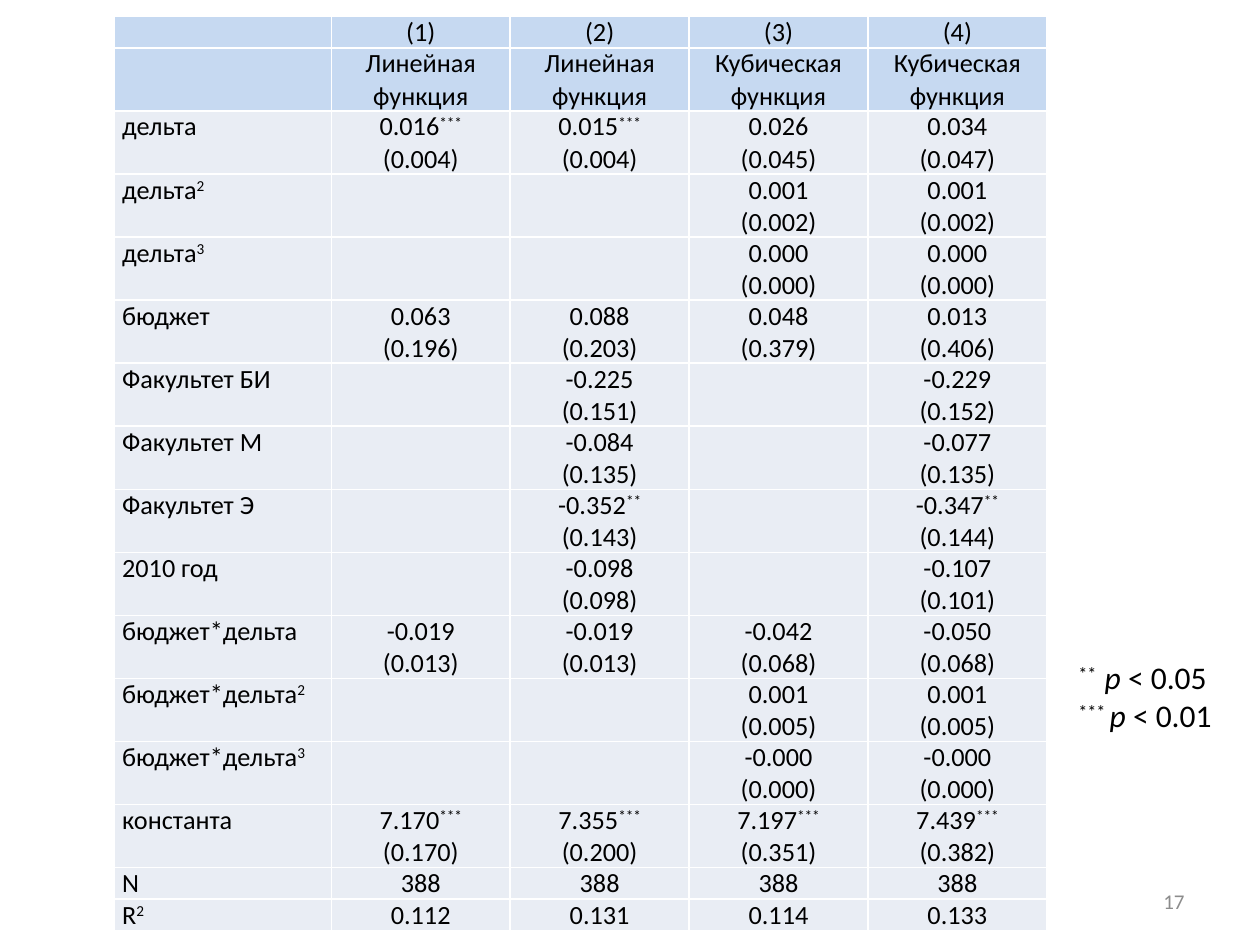
from dataclasses import dataclass

from lxml import etree
from pptx import Presentation
from pptx import util as u
from pptx.dml.color import RGBColor
from pptx.enum import text
from pptx.oxml import ns


@dataclass(frozen=True)
class Theme:
    """Colours, font and type sizes of the slide."""
    font: str = "Calibri"
    ink: str = "000000"
    grey: str = "8C8C8C"
    head: str = "C6D9F1"
    body: str = "E9EDF4"
    rule: str = "FFFFFF"
    cell: int = 15
    note: int = 18
    page: int = 12


THEME = Theme()
WIDE, HIGH = 10, 7.5
LINE = 0.23
COLS = [1.72] + [1.42] * 4
LEFT, MID, RIGHT = text.PP_ALIGN.LEFT, text.PP_ALIGN.CENTER, text.PP_ALIGN.RIGHT

HEAD = [
    ["", "(1)", "(2)", "(3)", "(4)"],
    ["", "Линейная функция", "Линейная функция", "Кубическая функция", "Кубическая функция"],
]
BODY = [
    ["дельта", "0.016^***^\n(0.004)", "0.015^***^\n(0.004)", "0.026\n(0.045)", "0.034\n(0.047)"],
    ["дельта^2", "", "", "0.001\n(0.002)", "0.001\n(0.002)"],
    ["дельта^3", "", "", "0.000\n(0.000)", "0.000\n(0.000)"],
    ["бюджет", "0.063\n(0.196)", "0.088\n(0.203)", "0.048\n(0.379)", "0.013\n(0.406)"],
    ["Факультет БИ", "", "-0.225\n(0.151)", "", "-0.229\n(0.152)"],
    ["Факультет М", "", "-0.084\n(0.135)", "", "-0.077\n(0.135)"],
    ["Факультет Э", "", "-0.352^**^\n(0.143)", "", "-0.347^**^\n(0.144)"],
    ["2010 год", "", "-0.098\n(0.098)", "", "-0.107\n(0.101)"],
    ["бюджет*дельта", "-0.019\n(0.013)", "-0.019\n(0.013)", "-0.042\n(0.068)", "-0.050\n(0.068)"],
    ["бюджет*дельта^2", "", "", "0.001\n(0.005)", "0.001\n(0.005)"],
    ["бюджет*дельта^3", "", "", "-0.000\n(0.000)", "-0.000\n(0.000)"],
    ["константа", "7.170^***^\n(0.170)", "7.355^***^\n(0.200)",
     "7.197^***^\n(0.351)", "7.439^***^\n(0.382)"],
    ["N"] + ["388"] * 4,
    ["R^2", "0.112", "0.131", "0.114", "0.133"],
]
NOTES = [
    [("**  ", "up"), ("p ", "slant"), ("< 0.05", "")],
    [("*** ", "up"), ("p", "slant"), (" < 0.01", "")],
]


def style(par, size, tint, align):
    """Set the font and alignment of a paragraph."""
    font = par.font
    font.name, font.size = THEME.font, u.Pt(size)
    font.color.rgb = RGBColor.from_string(tint)
    par.alignment = align


def write(par, runs):
    """Add runs of text, each plain, raised or italic."""
    for words, look in runs:
        for i, line in enumerate(words.split("\n")):
            if i:
                par.add_line_break()
            if line:
                run = par.add_run()
                run.text = line
                if look == "up":
                    run._r.get_or_add_rPr().set("baseline", "30000")
                elif look == "slant":
                    run.font.italic = True


def split(words):
    """Turn text with ^ marks into plain and raised runs."""
    return [(part, "up" if i % 2 else "") for i, part in enumerate(words.split("^"))]


def edge(cell):
    """Draw the four borders of a cell."""
    props = cell._tc.get_or_add_tcPr()
    for i, side in enumerate(("lnL", "lnR", "lnT", "lnB")):
        line = etree.Element(ns.qn("a:" + side), w=str(u.Pt(1)))
        fill = etree.SubElement(line, ns.qn("a:solidFill"))
        etree.SubElement(fill, ns.qn("a:srgbClr"), val=THEME.rule)
        props.insert(i, line)


def fill(cell, words, tint, align):
    """Fill one table cell."""
    cell.margin_left = cell.margin_right = u.Inches(0.06)
    cell.margin_top = cell.margin_bottom = 0
    cell.fill.solid()
    cell.fill.fore_color.rgb = RGBColor.from_string(tint)
    edge(cell)
    par = cell.text_frame.paragraphs[0]
    style(par, THEME.cell, THEME.ink, align)
    write(par, split(words))
    if not words:
        end = etree.SubElement(par._p, ns.qn("a:endParaRPr"))
        end.set("sz", str(THEME.cell * 100))


def grid(slide, left, top):
    """Add the table of regression results."""
    rows = HEAD + BODY
    tall = [LINE if row[-1].startswith("(") or row[0] in ("N", "R^2") else 2 * LINE
            for row in rows]
    table = slide.shapes.add_table(
        len(rows), len(COLS), u.Inches(left), u.Inches(top),
        u.Inches(sum(COLS)), u.Inches(sum(tall))).table
    for col, width in zip(table.columns, COLS):
        col.width = u.Inches(width)
    for r, row in enumerate(rows):
        table.rows[r].height = u.Inches(tall[r])
        tint = THEME.head if r < len(HEAD) else THEME.body
        for c, words in enumerate(row):
            fill(table.cell(r, c), words, tint, MID if c else LEFT)


def label(slide, box, lines, size, tint, align, wrap):
    """Add a text box with one paragraph per line."""
    frame = slide.shapes.add_textbox(*map(u.Inches, box)).text_frame
    frame.word_wrap = wrap
    frame.vertical_anchor = text.MSO_ANCHOR.MIDDLE
    for i, runs in enumerate(lines):
        par = frame.add_paragraph() if i else frame.paragraphs[0]
        style(par, size, tint, align)
        write(par, runs)


def main():
    """Build and save the slide."""
    deck = Presentation()
    deck.slide_width, deck.slide_height = u.Inches(WIDE), u.Inches(HIGH)
    slide = deck.slides.add_slide(deck.slide_layouts[6])
    label(slide, (7.17, 6.95, 2.33, 0.4), [[("17", "")]],
          THEME.page, THEME.grey, RIGHT, True)
    grid(slide, 0.91, 0.13)
    label(slide, (8.46, 5.17, 1.36, 0.71), NOTES,
          THEME.note, THEME.ink, LEFT, False)
    deck.save("out.pptx")


if __name__ == "__main__":
    main()
